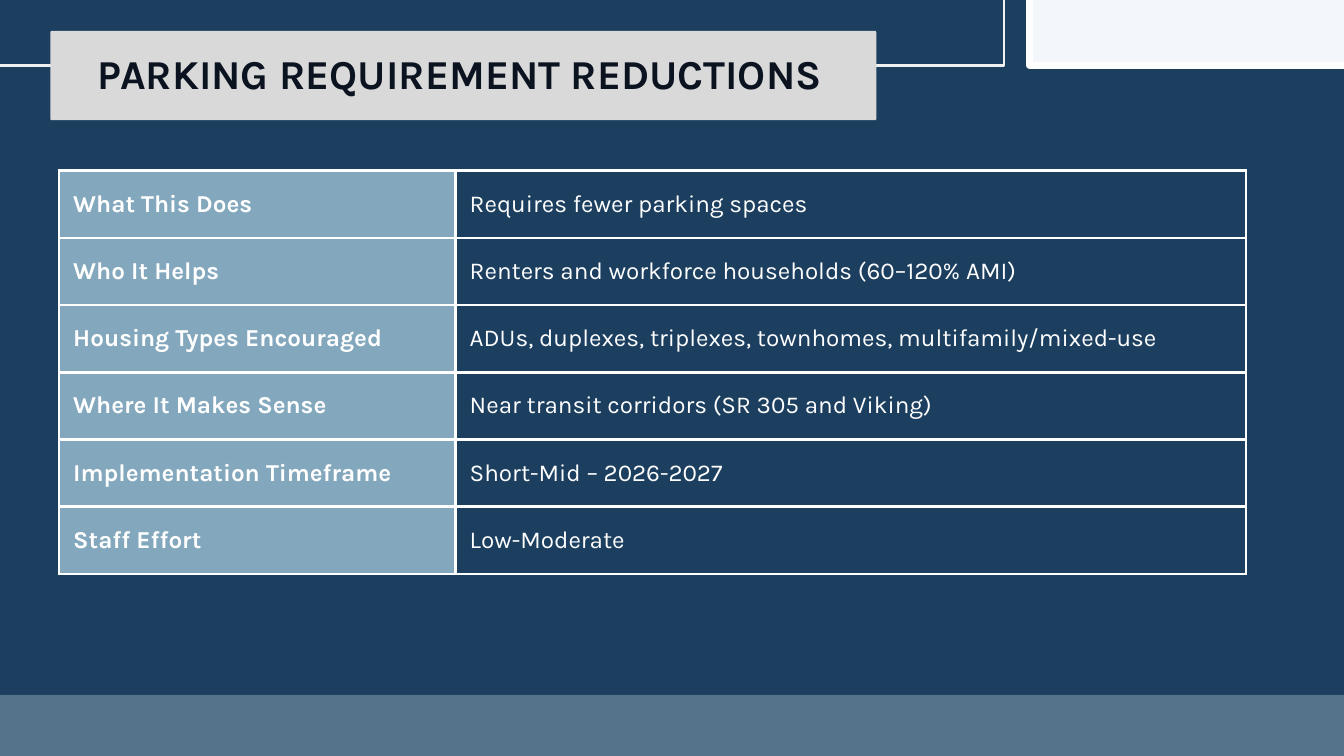
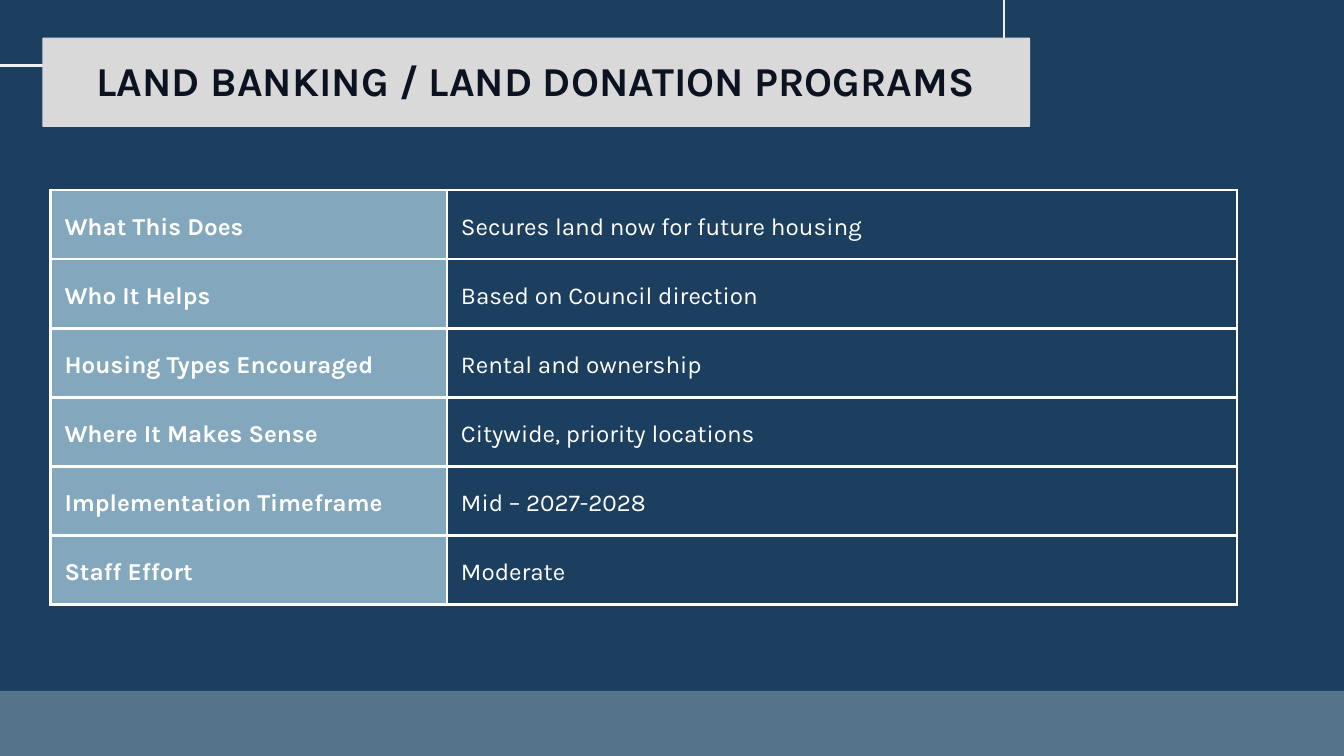
from lxml import etree
from pptx import Presentation
from pptx import util as u
from pptx.dml.color import RGBColor
from pptx.enum import shapes, text
from pptx.oxml import ns

NAVY = RGBColor(0x1C, 0x3F, 0x60)
INK = RGBColor(0x0B, 0x13, 0x20)
WHITE = RGBColor(0xFF, 0xFF, 0xFF)
OFF_WHITE = RGBColor(0xF0, 0xF0, 0xF0)
PALE = RGBColor(0xF3, 0xF6, 0xFA)
PLATE_GREY = RGBColor(0xD9, 0xD9, 0xD9)
LABEL_BLUE = RGBColor(0x83, 0xA8, 0xBD)
BAND_BLUE = RGBColor(0xAF, 0xC1, 0xD0)

SLIDE_W, SLIDE_H = 20, 11.25
FRAME_RIGHT, FRAME_BOTTOM = 14.94, 0.97
BORDER_PT = 3
CORNER = 0.02
COLUMNS = (5.9, 11.76)
CELL_MARGIN = u.Inches(0.21)

TITLE_FONT = {"name": "Karla", "size": u.Pt(44), "bold": True}
LABEL_FONT = {"name": "Karla", "size": u.Pt(26), "bold": True}
VALUE_FONT = {**LABEL_FONT, "bold": False}
CELL_FORMAT = {
    "vertical_anchor": text.MSO_ANCHOR.MIDDLE,
    "margin_left": CELL_MARGIN, "margin_right": CELL_MARGIN,
    "margin_top": CELL_MARGIN, "margin_bottom": CELL_MARGIN,
}
TITLE_FRAME = {
    "word_wrap": True, "auto_size": text.MSO_AUTO_SIZE.SHAPE_TO_FIT_TEXT,
    "margin_left": 0, "margin_right": 0, "margin_top": 0, "margin_bottom": 0,
}

TOPICS = ("What This Does", "Who It Helps", "Housing Types Encouraged",
          "Where It Makes Sense", "Implementation Timeframe", "Staff Effort")

# Boxes are left, top, width, height in inches
STRATEGIES = [
    {
        "title": "PARKING REQUIREMENT REDUCTIONS",
        "frame_origin": (-0.17, -0.08),
        "panel_box": (15.32, -0.38, 4.84, 1.35),
        "plate_box": (0.75, 0.46, 12.29, 1.33),
        "title_box": (0.38, 0.83, 12.94, 0.67),
        "band_height": 0.91,
        "table_box": (0.88, 2.54, sum(COLUMNS), 6),
        "line_spacing": None,
        "answers": ("Requires fewer parking spaces",
                    "Renters and workforce households (60–120% AMI)",
                    "ADUs, duplexes, triplexes, townhomes, multifamily/mixed-use",
                    "Near transit corridors (SR 305 and Viking)",
                    "Short-Mid – 2026-2027",
                    "Low-Moderate"),
    },
    {
        "title": "LAND BANKING / LAND DONATION PROGRAMS",
        "frame_origin": (-0.25, -0.32),
        "panel_box": None,
        "plate_box": (0.63, 0.56, 14.7, 1.33),
        "title_box": (0.63, 0.93, 14.7, 1.29),
        "band_height": 0.97,
        "table_box": (0.75, 2.83, sum(COLUMNS), 6.17),
        "line_spacing": u.Pt(36.4),
        "answers": ("Secures land now for future housing",
                    "Based on Council direction",
                    "Rental and ownership",
                    "Citywide, priority locations",
                    "Mid – 2027-2028",
                    "Moderate"),
    },
]


def apply_format(target, values):
    for attribute, value in values.items():
        setattr(target, attribute, value)


def inches(box):
    return [u.Inches(length) for length in box]


def write(paragraph, words, font, color):
    run = paragraph.add_run()
    run.text = words
    apply_format(run.font, font)
    run.font.color.rgb = color


def add_block(slide, box, fill=None, line=None, line_pt=0,
              kind=shapes.MSO_SHAPE.RECTANGLE):
    block = slide.shapes.add_shape(kind, *inches(box))
    block.shadow.inherit = False
    if fill is None:
        block.fill.background()
    else:
        block.fill.solid()
        block.fill.fore_color.rgb = fill
    if line is None:
        block.line.fill.background()
    else:
        block.line.color.rgb = line
        block.line.width = u.Pt(line_pt)
    return block


def add_header(slide, strategy):
    # Thin frame running off the top left corner
    left, top = strategy["frame_origin"]
    add_block(slide, (left, top, FRAME_RIGHT - left, FRAME_BOTTOM - top),
              line=OFF_WHITE, line_pt=3)
    # Pale panel in the top right corner
    if strategy["panel_box"]:
        add_block(slide, strategy["panel_box"], PALE, WHITE, 7.5)
    # Title plate with slightly softened corners
    plate_box = strategy["plate_box"]
    plate = add_block(slide, plate_box, PLATE_GREY,
                      kind=shapes.MSO_SHAPE.ROUNDED_RECTANGLE)
    plate.adjustments[0] = CORNER / plate_box[3]
    # Title
    title = slide.shapes.add_textbox(*inches(strategy["title_box"])).text_frame
    apply_format(title, TITLE_FRAME)
    heading = title.paragraphs[0]
    apply_format(heading, {"alignment": text.PP_ALIGN.CENTER,
                           "line_spacing": u.Pt(45)})
    write(heading, strategy["title"], TITLE_FONT, INK)


def add_footer_band(slide, height):
    band = add_block(slide, (0, SLIDE_H - height, SLIDE_W, height), BAND_BLUE)
    color = band.fill._xPr.find(".//" + ns.qn("a:srgbClr"))
    etree.SubElement(color, ns.qn("a:alpha"), val="40000")


def add_borders(cell):
    properties = cell._tc.get_or_add_tcPr()
    for position, side in enumerate(("lnL", "lnR", "lnT", "lnB")):
        border = etree.Element(ns.qn("a:" + side), w=str(u.Pt(BORDER_PT)))
        solid = etree.SubElement(border, ns.qn("a:solidFill"))
        etree.SubElement(solid, ns.qn("a:srgbClr"), val=str(WHITE))
        properties.insert(position, border)


def add_summary_table(slide, box, answers, line_spacing):
    table = slide.shapes.add_table(len(TOPICS), len(COLUMNS), *inches(box)).table
    apply_format(table, {"first_row": False, "horz_banding": False})
    for column, width in zip(table.columns, COLUMNS):
        column.width = u.Inches(width)
    for row, *entries in zip(table.rows, TOPICS, answers):
        row.height = u.Inches(box[3] / len(TOPICS))
        for cell, words, font in zip(row.cells, entries, (LABEL_FONT, VALUE_FONT)):
            apply_format(cell, CELL_FORMAT)
            if font is LABEL_FONT:
                cell.fill.solid()
                cell.fill.fore_color.rgb = LABEL_BLUE
            else:
                cell.fill.background()
            add_borders(cell)
            entry = cell.text_frame.paragraphs[0]
            entry.line_spacing = line_spacing
            write(entry, words, font, WHITE)


def add_strategy_slide(deck, strategy):
    slide = deck.slides.add_slide(deck.slide_layouts[6])
    slide.background.fill.solid()
    slide.background.fill.fore_color.rgb = NAVY
    add_header(slide, strategy)
    add_footer_band(slide, strategy["band_height"])
    add_summary_table(slide, strategy["table_box"], strategy["answers"],
                      strategy["line_spacing"])


def main():
    deck = Presentation()
    apply_format(deck, {"slide_width": u.Inches(SLIDE_W),
                        "slide_height": u.Inches(SLIDE_H)})
    for strategy in STRATEGIES:
        add_strategy_slide(deck, strategy)
    deck.save("out.pptx")


if __name__ == "__main__":
    main()
